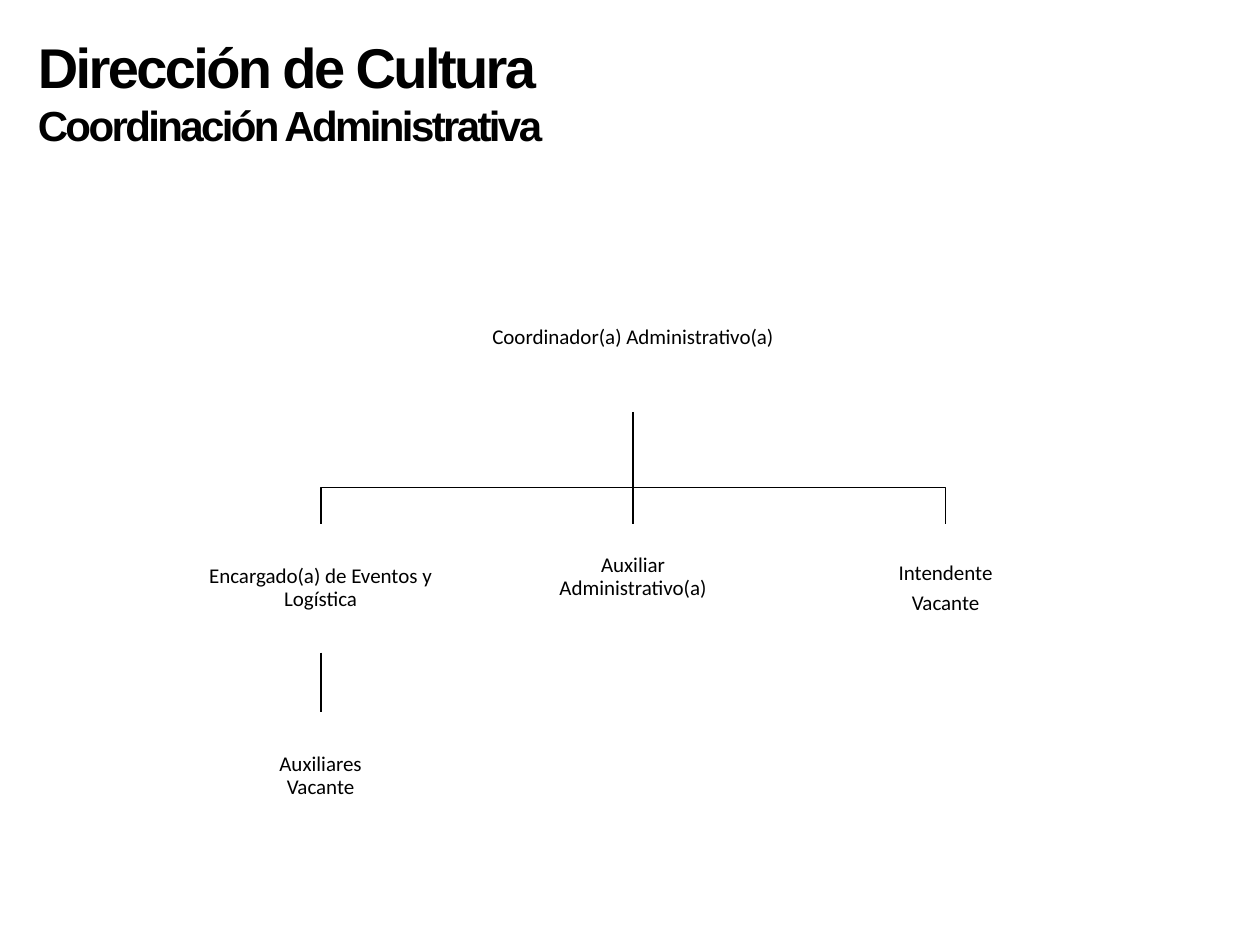
import pptx
import pptx.dml.color
import pptx.enum.shapes
import pptx.enum.text
import pptx.util
from lxml import etree
from pptx.oxml.ns import qn

Inches, Pt = pptx.util.Inches, pptx.util.Pt
ALIGN, ANCHOR = pptx.enum.text.PP_ALIGN, pptx.enum.text.MSO_ANCHOR
BLACK, WHITE = "000000", "FFFFFF"
TOP, BOTTOM = 0, 2                      # connection sites

# Grid of the chart, in inches from its own corner
BOX_WIDTH, BOX_HEIGHT = 2.03, 1.02
COLUMN, ROW = 2.48, 1.49
HEAD_WIDTH, HEAD_HEIGHT = 2.56, 1.18
FIRST_ROW = 2.07
BUS = 1.78                              # height of the horizontal branch line
TEXT_LINE = 0.18


def colour(code):
    return pptx.dml.color.RGBColor.from_string(code)


def add_title(slide, left, top, width, height):
    title = slide.shapes.title
    title.left, title.top = Inches(left), Inches(top)
    title.width, title.height = Inches(width), Inches(height)
    frame = title.text_frame
    frame.vertical_anchor = ANCHOR.TOP
    frame.auto_size = pptx.enum.text.MSO_AUTO_SIZE.NONE
    frame.text = "Dirección de Cultura\nCoordinación Administrativa"
    for para, size in zip(frame.paragraphs, (32, 24)):
        para.alignment = ALIGN.LEFT
        style_font(para.font, "Arial", size, bold=True)
        for span in para.runs:
            span._r.get_or_add_rPr().set("spc", "-150")


def style_font(font, name, size, bold=False):
    font.name, font.size, font.bold = name, Pt(size), bold
    font.color.rgb = colour(BLACK)


def add_box(slide, left, top, width, height, text, lift=0):
    """Place a post; lift raises its text by that many half lines."""
    box = slide.shapes.add_shape(
        pptx.enum.shapes.MSO_SHAPE.RECTANGLE,
        Inches(left), Inches(top), Inches(width), Inches(height))
    box.shadow.inherit = False
    box.fill.solid()
    box.fill.fore_color.rgb = colour(WHITE)
    box.line.fill.background()
    frame = box.text_frame
    frame.word_wrap = True
    frame.vertical_anchor = ANCHOR.MIDDLE
    frame.margin_left = frame.margin_right = frame.margin_top = Inches(0.01)
    frame.margin_bottom = Inches(0.01 + lift * TEXT_LINE)
    frame.text = text
    for para in frame.paragraphs:
        para.alignment = ALIGN.CENTER
        para.line_spacing = 0.9
        para.space_after = Pt(4.2)
        style_font(para.font, "Calibri", 12)
    return box


def style_line(line):
    line.color.rgb = colour(BLACK)
    line.width = Pt(1)


def join_straight(slide, upper, lower):
    link = slide.shapes.add_connector(
        pptx.enum.shapes.MSO_CONNECTOR.STRAIGHT, 0, 0, 0, 0)
    link.begin_connect(upper, BOTTOM)
    link.end_connect(lower, TOP)
    style_line(link.line)
    etree.SubElement(link._element.spPr, qn("a:effectLst"))


def join_bent(slide, upper, lower, bus):
    start_x = upper.left + upper.width // 2
    end_x = lower.left + lower.width // 2
    builder = slide.shapes.build_freeform(start_x, upper.top + upper.height)
    builder.add_line_segments(
        [(start_x, bus), (end_x, bus), (end_x, lower.top)], close=False)
    branch = builder.convert_to_shape()
    branch.shadow.inherit = False
    branch.fill.background()
    style_line(branch.line)


def add_chart_of_posts(slide, left, top):
    def post(column, row, text, lift=0):
        return add_box(slide, left + column * COLUMN, top + FIRST_ROW + row * ROW,
                       BOX_WIDTH, BOX_HEIGHT, text, lift)

    # Posts
    middle = left + COLUMN + BOX_WIDTH / 2
    head = add_box(slide, middle - HEAD_WIDTH / 2, top, HEAD_WIDTH, HEAD_HEIGHT,
                   "Coordinador(a) Administrativo(a)")
    events = post(0, 0, "Encargado(a) de Eventos y Logística")
    assistant = post(1, 0, "Auxiliar\vAdministrativo(a)", lift=1)
    caretaker = post(2, 0, "Intendente\nVacante")
    helpers = post(0, 1, "Auxiliares\vVacante")

    # Lines
    for side in (events, caretaker):
        join_bent(slide, head, side, Inches(top + BUS))
    join_straight(slide, head, assistant)
    join_straight(slide, events, helpers)


def main():
    deck = pptx.Presentation()
    deck.slide_width, deck.slide_height = Inches(10), Inches(7.5)
    page = deck.slides.add_slide(deck.slide_layouts[5])
    add_title(page, 0.2, 0.21, 7.95, 1.04)
    add_chart_of_posts(page, 1.53, 2.09)
    deck.save("out.pptx")


if __name__ == "__main__":
    main()
